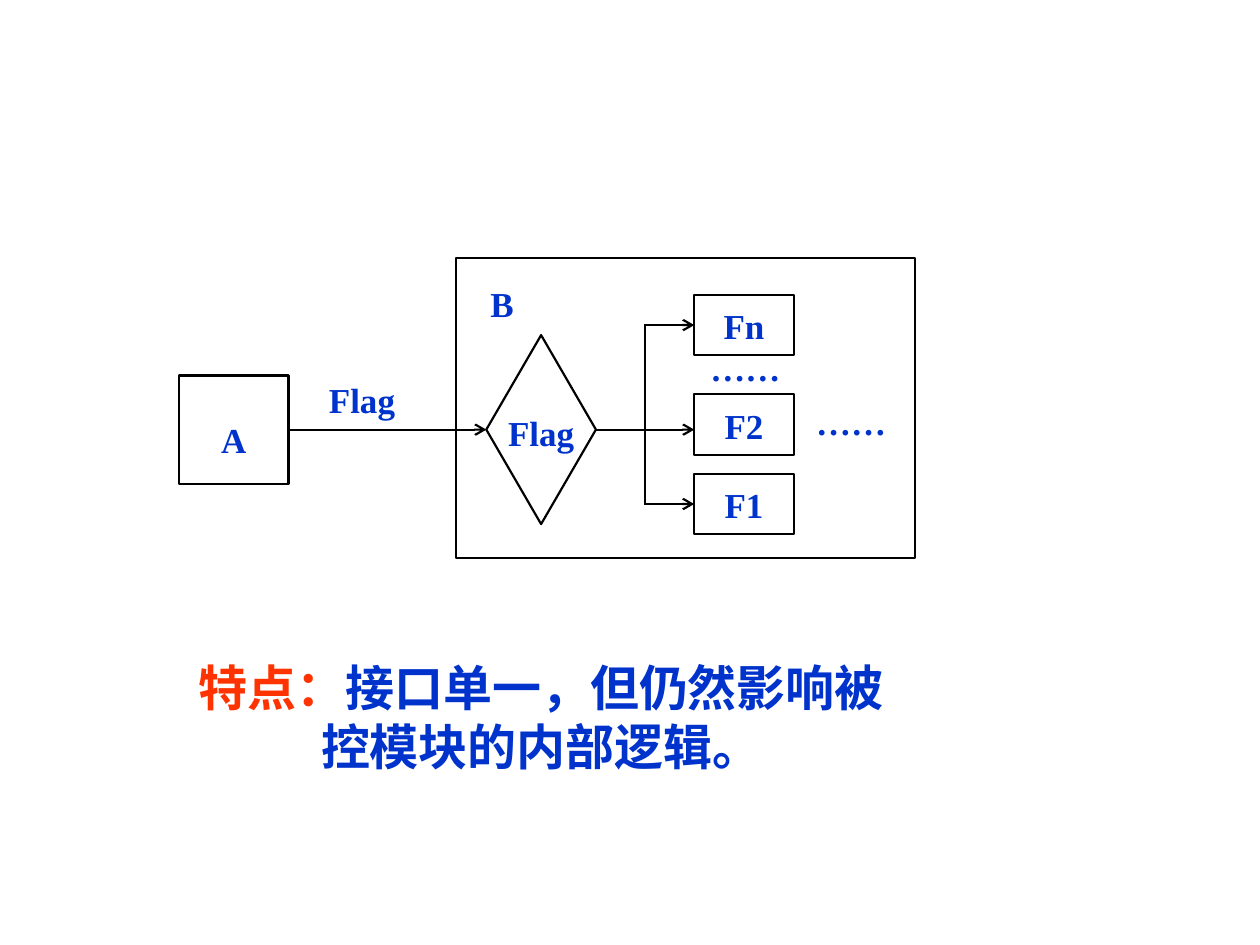
from dataclasses import dataclass
from typing import Optional

from lxml.etree import SubElement as Sub
from pptx import Presentation
from pptx.dml.color import RGBColor as RGB
from pptx.enum.shapes import MSO_CONNECTOR as Link, MSO_SHAPE as Kind
from pptx.enum.text import MSO_ANCHOR as Anchor, PP_ALIGN as Align
from pptx.oxml.ns import qn
from pptx.util import Emu, Pt

SCALE = 9144  # EMU per px, 100 px to the inch


@dataclass(frozen=True)
class Theme:
    ink: RGB = RGB(0x00, 0x00, 0x00)
    paper: RGB = RGB(0xFF, 0xFF, 0xFF)
    blue: RGB = RGB(0x00, 0x33, 0xCC)
    red: RGB = RGB(0xFF, 0x33, 0x00)
    serif: str = "Times New Roman"
    sans: str = "Arial"
    label: int = 20
    note: int = 28
    line: float = 1.25


@dataclass(frozen=True)
class Box:
    x: int
    y: int
    w: int
    h: int
    text: str = ""
    space: float = 1.0
    pad: int = 10
    base: int = 1
    kind: Kind = Kind.RECTANGLE
    fill: bool = True


@dataclass(frozen=True)
class Label:
    x: int
    y: int
    w: int
    h: int
    text: str
    space: float = 1.0
    pad: int = 2
    rim: int = 1
    align: Align = Align.CENTER


@dataclass(frozen=True)
class Wire:
    x1: int
    y1: int
    x2: int
    y2: int
    head: bool = True
    start: Optional[str] = None  # leaves its right side
    stop: Optional[str] = None  # enters its left side


THEME = Theme()


def px(n: int) -> Emu:
    return Emu(n * SCALE)


def add_run(para, text: str, size: int, font: str, color: RGB) -> None:
    run = para.add_run()
    run.text = text
    run.font.size, run.font.name, run.font.bold = Pt(size), font, True
    run.font.color.rgb = color


def set_frame(frame, side: int, top: int, base: int, align: Align, space: float = 1.0):
    frame.word_wrap = True
    frame.vertical_anchor = Anchor.TOP
    frame.margin_left = frame.margin_right = px(side)
    frame.margin_top, frame.margin_bottom = px(top), px(base)
    para = frame.paragraphs[0]
    para.alignment, para.line_spacing = align, space
    return para


def draw_box(slide, box: Box):
    shape = slide.shapes.add_shape(box.kind, px(box.x), px(box.y), px(box.w), px(box.h))
    shape.shadow.inherit = False
    if box.fill:
        shape.fill.solid()
        shape.fill.fore_color.rgb = THEME.paper
    else:
        shape.fill.background()
    shape.line.color.rgb, shape.line.width = THEME.ink, Pt(THEME.line)
    if box.text:
        para = set_frame(shape.text_frame, box.pad, 1, box.base, Align.CENTER, box.space)
        add_run(para, box.text, THEME.label, THEME.serif, THEME.blue)
    return shape


def draw_label(slide, item: Label) -> None:
    area = slide.shapes.add_textbox(px(item.x), px(item.y), px(item.w), px(item.h))
    para = set_frame(area.text_frame, item.pad, item.rim, item.rim, item.align, item.space)
    add_run(para, item.text, THEME.label, THEME.serif, THEME.blue)


def draw_wire(slide, wire: Wire, nodes: dict) -> None:
    line = slide.shapes.add_connector(
        Link.STRAIGHT, px(wire.x1), px(wire.y1), px(wire.x2), px(wire.y2))
    if wire.start:
        line.begin_connect(nodes[wire.start], 3)
    if wire.stop:
        line.end_connect(nodes[wire.stop], 1)
    line.line.color.rgb, line.line.width = THEME.ink, Pt(THEME.line)
    if wire.head:
        Sub(line.line._get_or_add_ln(), qn("a:tailEnd"), type="arrow")
    Sub(line._element.spPr, qn("a:effectLst"))


# Module boxes; the F boxes share one column and size
NODES = {
    "B": Box(362, 205, 364, 238, fill=False),
    "A": Box(142, 298, 87, 86, "A", space=2.0, base=5),
    "Flag": Box(386, 266, 87, 150, kind=Kind.DIAMOND, fill=False),
}
for name, top in (("F2", 313), ("F1", 376), ("Fn", 234)):
    NODES[name] = Box(551, top, 79, 48, name, space=1.2)

LABELS = (
    Label(363, 183, 71, 79, "B", space=2.2),
    Label(386, 316, 87, 57, "Flag", space=1.3, pad=6),
    Label(552, 274, 79, 43, "……"),
    Label(638, 313, 117, 65, "……", pad=10, rim=5, align=Align.JUSTIFY),
    Label(259, 286, 71, 55, "Flag", space=1.4, align=Align.JUSTIFY),
)

WIRES = (
    Wire(229, 341, 386, 341, start="A", stop="Flag"),
    Wire(473, 341, 551, 341, start="Flag"),
    Wire(512, 258, 551, 258, stop="Fn"),
    Wire(512, 400, 551, 400, stop="F1"),
    Wire(512, 257, 512, 401, head=False),
)


def main() -> None:
    deck = Presentation()
    deck.slide_width, deck.slide_height = px(1000), px(750)
    slide = deck.slides.add_slide(deck.slide_layouts[6])

    # Diagram
    nodes = {name: draw_box(slide, box) for name, box in NODES.items()}
    for wire in WIRES:
        draw_wire(slide, wire, nodes)
    for item in LABELS:
        draw_label(slide, item)

    # Note below
    area = slide.shapes.add_textbox(px(142), px(517), px(575), px(103))
    para = set_frame(area.text_frame, 10, 5, 5, Align.CENTER)
    add_run(para, "特点：", THEME.note, THEME.sans, THEME.red)
    add_run(para, "接口单一，但仍然影响被控模块的内部逻辑。",
            THEME.note, THEME.sans, THEME.blue)

    deck.save("out.pptx")


if __name__ == "__main__":
    main()
